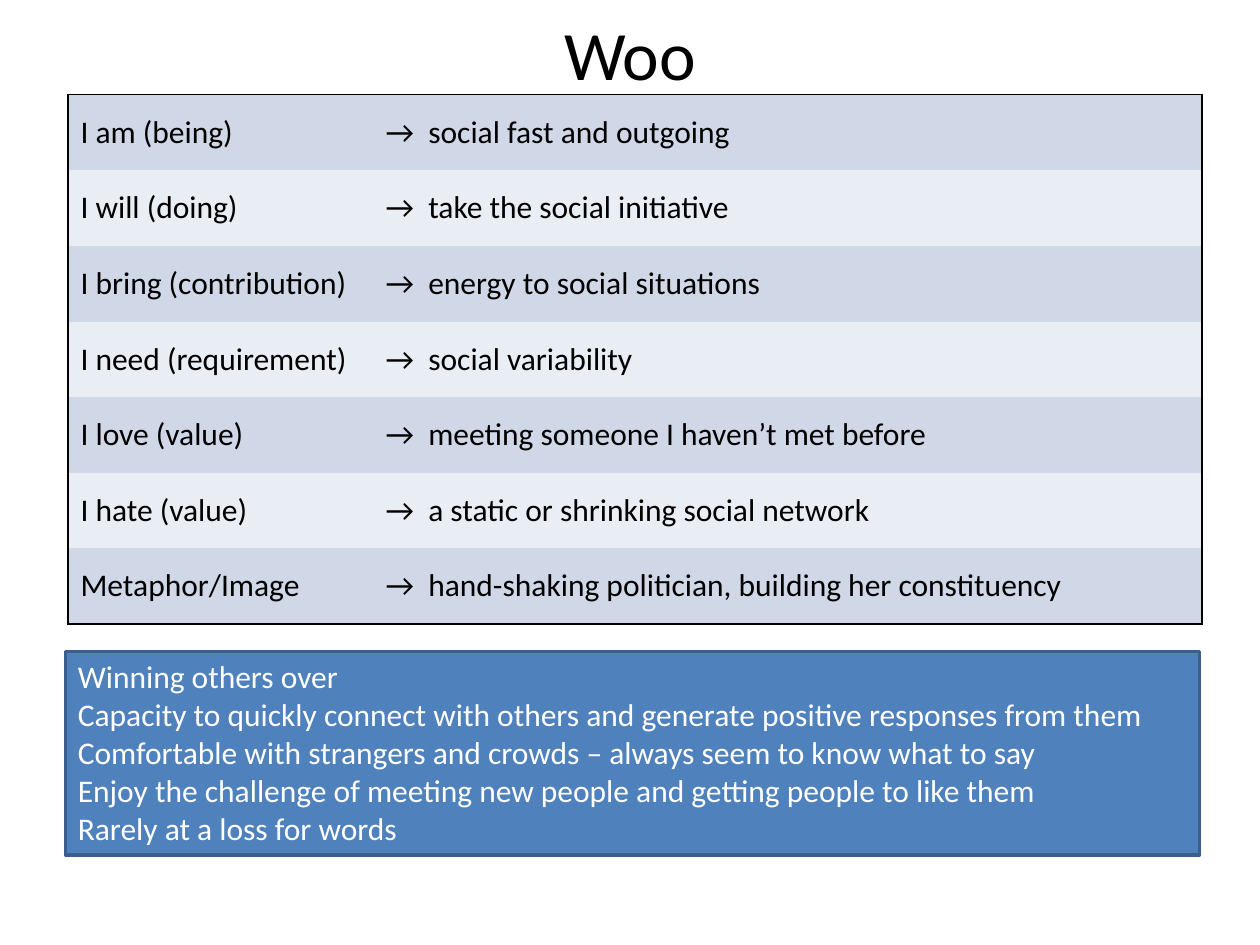
from dataclasses import dataclass

from lxml.etree import SubElement
from pptx import Presentation
from pptx.dml.color import RGBColor as RGB
from pptx.enum.shapes import MSO_SHAPE as SHAPE
from pptx.enum.text import MSO_ANCHOR as ANCHOR, MSO_AUTO_SIZE as AUTO, PP_ALIGN as ALIGN
from pptx.oxml.ns import qn
from pptx.util import Cm, Pt


@dataclass(frozen=True)
class Theme:
    font: str = "Calibri"
    title: float = 39.6
    body: float = 18
    ink: str = "000000"
    paper: str = "FFFFFF"
    bands: tuple = ("D0D8E8", "E9EDF4")
    box: str = "4F81BD"
    box_line: str = "3A5F8C"


theme = Theme()


def style(p, size, color, align=ALIGN.LEFT):
    p.alignment = align
    for r in p.runs:
        r.font.name = theme.font
        r.font.size = Pt(size)
        r.font.color.rgb = RGB.from_string(color)


def set_borders(cell, sides):
    """Draw the named sides (from L, R, T, B) and leave the others empty."""
    tcPr = cell._tc.get_or_add_tcPr()
    for side in "LRTB":
        ln = SubElement(tcPr, qn(f"a:ln{side}"), w=str(Pt(1)))
        if side in sides:
            fill = SubElement(ln, qn("a:solidFill"))
            SubElement(fill, qn("a:srgbClr"), val=theme.ink)
        else:
            SubElement(ln, qn("a:noFill"))


prs = Presentation()
prs.slide_width, prs.slide_height = Cm(25.4), Cm(19.05)
s = prs.slides.add_slide(prs.slide_layouts[6])

# Title
tf = s.shapes.add_textbox(Cm(1.27), Cm(0.43), Cm(22.86), Cm(1.27)).text_frame
tf.word_wrap = True
tf.vertical_anchor = ANCHOR.MIDDLE
tf.text = "Woo"
style(tf.paragraphs[0], theme.title, theme.ink, ALIGN.CENTER)

# Statement table
rows = [
    ("I am (being)", "social fast and outgoing"),
    ("I will (doing)", "take the social initiative"),
    ("I bring (contribution)", "energy to social situations"),
    ("I need (requirement)", "social variability"),
    ("I love (value)", "meeting someone I haven’t met before"),
    ("I hate (value)", "a static or shrinking social network"),
    ("Metaphor/Image", "hand-shaking politician, building her constituency"),
]
last = len(rows) - 1
table = s.shapes.add_table(len(rows), 2, Cm(1.37), Cm(1.91), Cm(22.86), Cm(10.67)).table
table.first_row = table.horz_banding = False
table.columns[0].width, table.columns[1].width = Cm(6.15), Cm(16.71)
for i, (label, answer) in enumerate(rows):
    for j, text in enumerate((label, f"→\t{answer}")):
        cell = table.cell(i, j)
        set_borders(cell, "LR"[j] + "T" * (i == 0) + "B" * (i == last))
        cell.fill.solid()
        cell.fill.fore_color.rgb = RGB.from_string(theme.bands[i % 2])
        cell.vertical_anchor = ANCHOR.MIDDLE
        p = cell.text_frame.paragraphs[0]
        p.text = text
        if j == 1:
            tabs = SubElement(p._p.get_or_add_pPr(), qn("a:tabLst"))
            SubElement(tabs, qn("a:tab"), pos=str(Cm(0.86)), algn="l")
        style(p, theme.body, theme.ink)

# Summary box
sp = s.shapes.add_shape(SHAPE.RECTANGLE, Cm(1.32), Cm(13.13), Cm(22.86), Cm(4.11))
sp.shadow.inherit = False
sp.fill.solid()
sp.fill.fore_color.rgb = RGB.from_string(theme.box)
sp.line.color.rgb = RGB.from_string(theme.box_line)
sp.line.width = Pt(2)
tf = sp.text_frame
tf.word_wrap = True
tf.auto_size = AUTO.SHAPE_TO_FIT_TEXT
tf.vertical_anchor = ANCHOR.TOP
tf.text = "\n".join([
    "Winning others over",
    "Capacity to quickly connect with others and generate positive responses from them",
    "Comfortable with strangers and crowds – always seem to know what to say",
    "Enjoy the challenge of meeting new people and getting people to like them",
    "Rarely at a loss for words",
])
for p in tf.paragraphs:
    style(p, theme.body, theme.paper)

prs.save("out.pptx")
